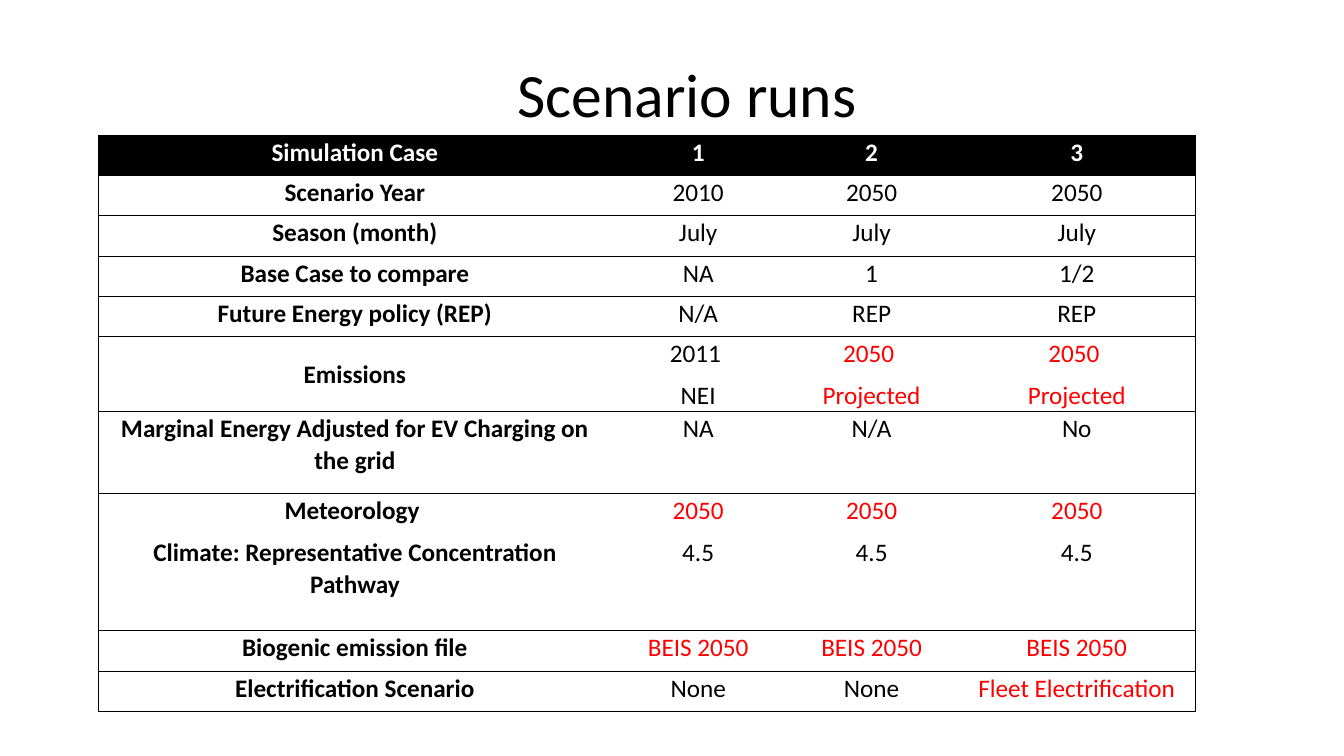
from lxml import etree
from pptx import Presentation, util as u
from pptx.dml.color import RGBColor
from pptx.enum import text
from pptx.oxml import ns

COLORS = {"ink": "000000", "paper": "FFFFFF", "changed": "FF0000"}
CHANGED = "*"  # prefix of a line shown in the "changed" colour
COLUMN_WIDTHS = [5.08, 1.73, 1.71, 2.36]
SCENARIOS = [  # row height, then label and the three cases
    (0.4, "Simulation Case", "1", "2", "3"),
    (0.4, "Scenario Year", "2010", "2050", "2050"),
    (0.4, "Season (month)", "July", "July", "July"),
    (0.4, "Base Case to compare", "NA", "1", "1/2"),
    (0.4, "Future Energy policy (REP)", "N/A", "REP", "REP"),
    (0.73, "Emissions", "2011 \nNEI", "*2050 \n*Projected", "*2050 \n*Projected"),
    (0.82, "Marginal Energy Adjusted for EV Charging on the grid", "NA", "N/A", "No"),
    (1.36, "Meteorology \nClimate: Representative Concentration Pathway",
     "*2050\n4.5", "*2050\n4.5", "*2050\n4.5"),
    (0.4, "Biogenic emission file", "*BEIS 2050", "*BEIS 2050", "*BEIS 2050"),
    (0.4, "Electrification Scenario", "None", "None", "*Fleet Electrification"),
]
CENTERED_ROWS = {"Emissions"}


def apply(target, formats):
    for name, value in formats.items():
        setattr(target, name, value)


class SlideBuilder:
    FONT = "Calibri"
    PLAIN_STYLE = "{2D5ABB26-0587-4C30-8999-92F81FD0307C}"
    CELL = {"margin_left": u.Inches(0.07), "margin_right": u.Inches(0.07),
            "margin_top": 0, "margin_bottom": 0}
    CELL_PARAGRAPH = {"alignment": text.PP_ALIGN.CENTER, "line_spacing": 1.07,
                      "space_after": u.Pt(6)}

    def __init__(self, deck):
        self.slide = deck.slides.add_slide(deck.slide_layouts[5])

    def add_words(self, paragraph, words, size, color, bold=False):
        run = paragraph.add_run()
        run.text = words
        apply(run.font, {"name": self.FONT, "size": u.Pt(size), "bold": bold})
        run.font.color.rgb = RGBColor.from_string(COLORS[color])

    def title(self, words, left, top, width, height):
        title = self.slide.shapes.title
        apply(title, {"left": u.Inches(left), "top": u.Inches(top),
                      "width": u.Inches(width), "height": u.Inches(height)})
        apply(title.text_frame, {"vertical_anchor": text.MSO_ANCHOR.BOTTOM,
                                 "word_wrap": True})
        heading = title.text_frame.paragraphs[0]
        apply(heading, {"alignment": text.PP_ALIGN.CENTER, "line_spacing": 0.9})
        self.add_words(heading, words, 44, "ink")

    def borders(self, cell, sides):
        """Rule the given sides, a subset of "LRTB", and clear the others."""
        properties = cell._tc.get_or_add_tcPr()
        for side in "LRTB":
            line = etree.SubElement(properties, ns.qn(f"a:ln{side}"), w=str(u.Pt(0.5)))
            if side in sides:
                fill = etree.SubElement(line, ns.qn("a:solidFill"))
                etree.SubElement(fill, ns.qn("a:srgbClr"), val=COLORS["ink"])
            else:
                etree.SubElement(line, ns.qn("a:noFill"))

    def cell(self, cell, words, sides, header, label, centered):
        apply(cell, self.CELL)
        cell.vertical_anchor = (text.MSO_ANCHOR.MIDDLE if centered
                                else text.MSO_ANCHOR.TOP)
        self.borders(cell, sides)
        if header:
            cell.fill.solid()
            cell.fill.fore_color.rgb = RGBColor.from_string(COLORS["ink"])
        else:
            cell.fill.background()
        for index, line in enumerate(words.split("\n")):
            frame = cell.text_frame
            paragraph = frame.add_paragraph() if index else frame.paragraphs[0]
            apply(paragraph, self.CELL_PARAGRAPH)
            color = ("paper" if header else
                     "changed" if line.startswith(CHANGED) else "ink")
            self.add_words(paragraph, line.lstrip(CHANGED), 18, color, header or label)

    def table(self, rows, widths, left, top):
        height = sum(row[0] for row in rows)
        frame = self.slide.shapes.add_table(
            len(rows), len(widths), u.Inches(left), u.Inches(top),
            u.Inches(sum(widths)), u.Inches(height))
        table = frame.table
        table._tbl.tblPr.find(ns.qn("a:tableStyleId")).text = self.PLAIN_STYLE
        apply(table, {"first_row": True, "horz_banding": False})
        for column, width in zip(table.columns, widths):
            column.width = u.Inches(width)
        last = len(widths) - 1
        for r, (row_height, *entries) in enumerate(rows):
            table.rows[r].height = u.Inches(row_height)
            for c, words in enumerate(entries):
                sides = "TB" + ("L" if c == 0 else "R" if c == last else "")
                self.cell(table.cell(r, c), words, sides, header=r == 0,
                          label=c == 0, centered=entries[0] in CENTERED_ROWS)


def main():
    deck = Presentation()
    apply(deck, {"slide_width": u.Inches(13.33), "slide_height": u.Inches(7.5)})
    builder = SlideBuilder(deck)
    builder.table(SCENARIOS, COLUMN_WIDTHS, 0.98, 1.34)
    builder.title("Scenario runs", 2.27, 0.5, 9.09, 0.85)
    deck.save("out.pptx")


if __name__ == "__main__":
    main()
